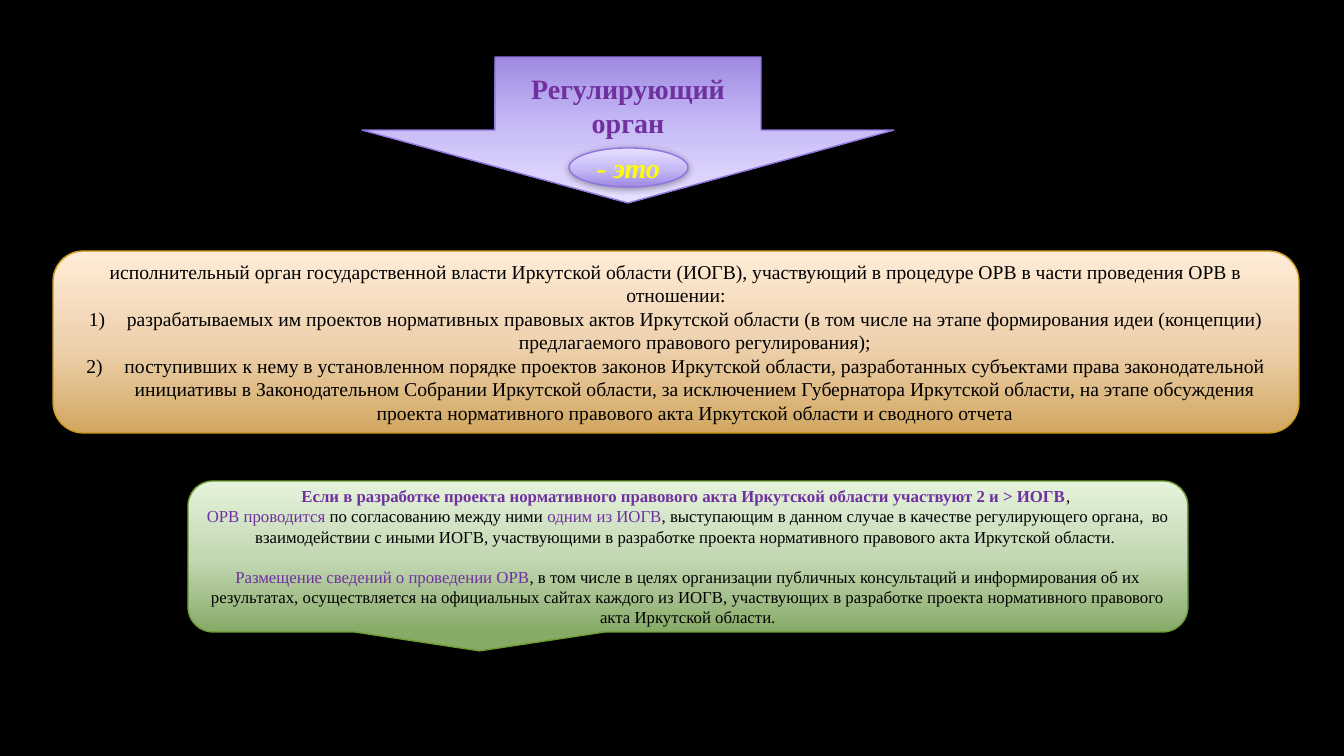
from copy import deepcopy
from dataclasses import dataclass

from lxml.etree import SubElement as Sub
from pptx import Presentation
from pptx.dml.color import RGBColor as Rgb
from pptx.enum.shapes import MSO_SHAPE as Kind
from pptx.enum.text import MSO_ANCHOR as Anchor, MSO_AUTO_SIZE as Auto, PP_ALIGN as Align
from pptx.oxml.ns import qn
from pptx.util import Emu, Pt


@dataclass(frozen=True)
class Theme:
    font: str = "Times New Roman"
    back: str = "000000"
    ink: str = "000000"
    key: str = "7030A0"
    glow: str = "FFFF00"
    lilac: tuple = ("9F8AE2", "C8BCF7", "E6E0FF", "8F73DF")
    sand: tuple = ("D1A760", "EED1AD", "FFECD7", "CB991B")
    leaf: tuple = ("87AA67", "C2D7B3", "E5F3DC", "6E9D35")
    stops: tuple = (0, 0.48, 1)
    title: int = 20
    body: int = 14
    note: int = 12
    gap: float = 14.4


class Board:
    def __init__(self, theme, wide, high):
        self.theme = theme
        self.deck = Presentation()
        self.deck.slide_width = self.px(wide)
        self.deck.slide_height = self.px(high)
        self.slide = self.deck.slides.add_slide(self.deck.slide_layouts[6])
        fill = self.slide.background.fill
        fill.solid()
        fill.fore_color.rgb = Rgb.from_string(theme.back)

    def px(self, count):
        return Emu(round(count * 914400 / 100.8))

    def shape(self, kind, box, tones, turn=0):
        item = self.slide.shapes.add_shape(kind, *map(self.px, box))
        item.rotation = turn
        *shades, edge = tones
        self.blend(item.fill, shades)
        item.line.color.rgb = Rgb.from_string(edge)
        item.line.width = Pt(1)
        self.shade(item)
        item.text_frame.vertical_anchor = Anchor.MIDDLE
        return item

    def blend(self, fill, shades):
        fill.gradient()
        fill.gradient_angle = 90
        first = fill._fill._gradFill.find(qn("a:gsLst"))[0]
        first.addnext(deepcopy(first))
        for stop, place, tone in zip(fill.gradient_stops, self.theme.stops, shades):
            stop.position = place
            stop.color.rgb = Rgb.from_string(tone)

    def shade(self, item):
        item.shadow.inherit = False
        effects = item._element.spPr.find(qn("a:effectLst"))
        cast = Sub(effects, qn("a:outerShdw"), blurRad=str(Pt(5)),
                   dist=str(Pt(1)), dir="5400000", rotWithShape="0")
        tone = Sub(cast, qn("a:srgbClr"), val="000000")
        Sub(tone, qn("a:alpha"), val="32000")

    def label(self, box):
        item = self.slide.shapes.add_textbox(*map(self.px, box))
        item.text_frame.word_wrap = True
        item.text_frame.auto_size = Auto.SHAPE_TO_FIT_TEXT
        return item

    def words(self, item, paras, size, bold=False, slant=False):
        frame = item.text_frame
        frame.text = "\n".join("".join(part for part, _ in para) for para in paras)
        for line, para in zip(frame.paragraphs, paras):
            line.alignment = Align.CENTER
            line.text = para[0][0]
            for part, _ in para[1:]:
                line.add_run().text = part
            for run, (_, tone) in zip(line.runs, para):
                font = run.font
                font.name = self.theme.font
                font.size = Pt(size)
                font.bold = bold
                font.italic = slant
                font.color.rgb = Rgb.from_string(tone)
        return frame.paragraphs

    def number(self, line):
        props = line._p.get_or_add_pPr()
        props.set("marL", str(self.px(38)))
        props.set("indent", str(-self.px(38)))
        Sub(props, qn("a:buFont"), typeface="+mj-lt")
        Sub(props, qn("a:buAutoNum"), type="arabicParenR")

    def save(self):
        self.deck.save("out.pptx")


def main():
    theme = Theme()
    ink, key = theme.ink, theme.key
    board = Board(theme, 1344, 756)

    role = board.shape(Kind.ROUNDED_RECTANGLE, (53, 251, 1246, 182), theme.sand)
    duties = [
        "исполнительный орган государственной власти Иркутской области (ИОГВ), "
        "участвующий в процедуре ОРВ в части проведения ОРВ в отношении:",
        "разрабатываемых им проектов нормативных правовых актов Иркутской области "
        "(в том числе на этапе формирования идеи (концепции) предлагаемого "
        "правового регулирования);",
        "поступивших к нему в установленном порядке проектов законов Иркутской "
        "области, разработанных субъектами права законодательной инициативы в "
        "Законодательном Собрании Иркутской области, за исключением Губернатора "
        "Иркутской области, на этапе обсуждения проекта нормативного правового "
        "акта Иркутской области и сводного отчета",
    ]
    lines = board.words(role, [[(duty, ink)] for duty in duties], theme.body)
    for line in lines[1:]:
        board.number(line)

    board.shape(Kind.UP_ARROW, (362, 57, 532, 146), theme.lilac, 180)

    note = board.shape(Kind.ROUNDED_RECTANGULAR_CALLOUT, (188, 481, 1000, 151), theme.leaf)
    lines = board.words(note, [
        [("Если в разработке проекта нормативного правового акта Иркутской "
          "области участвуют 2 и > ИОГВ", key), (", ", ink)],
        [("ОРВ проводится ", key), ("по согласованию между ними ", ink),
         ("одним из ИОГВ", key),
         (", выступающим в данном случае в качестве регулирующего органа,  во "
          "взаимодействии с иными ИОГВ, участвующими в разработке проекта "
          "нормативного правового акта Иркутской области. ", ink)],
        [("Размещение сведений о проведении ОРВ", key),
         (", в том числе в целях организации публичных консультаций и "
          "информирования об их результатах, осуществляется на официальных "
          "сайтах каждого из ИОГВ, участвующих в разработке проекта "
          "нормативного правового акта Иркутской области.", ink)],
    ], theme.note)
    lines[0].runs[0].font.bold = True
    lines[2].space_before = Pt(theme.gap)

    badge = board.shape(Kind.OVAL, (569, 148, 119, 39), theme.lilac)
    board.words(badge, [[("- это", theme.glow)]], theme.title, True, True)

    head = board.label((505, 67, 246, 78))
    board.words(head, [[("Регулирующий орган", key)]], theme.title, True)

    board.save()


if __name__ == "__main__":
    main()
